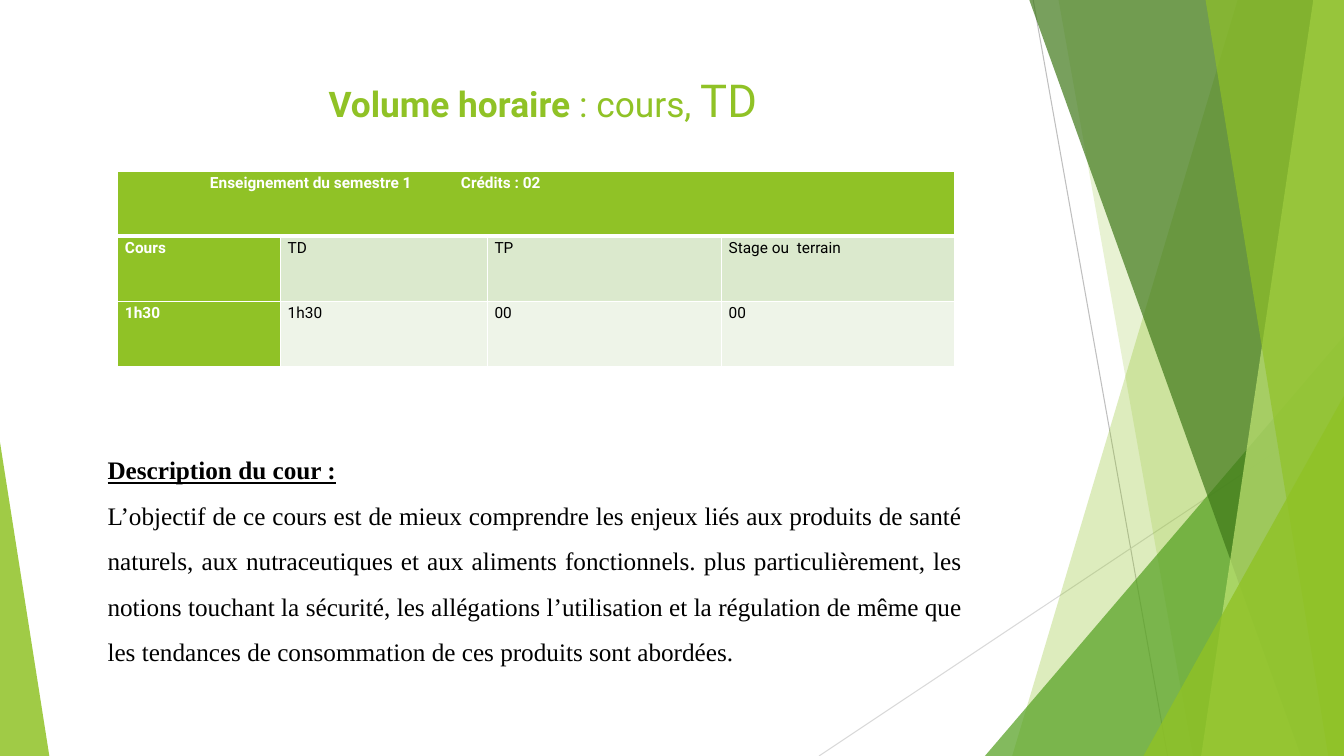
from lxml.etree import SubElement
from pptx import Presentation
from pptx.dml.color import RGBColor
from pptx.enum.shapes import MSO_CONNECTOR as Connector, MSO_SHAPE as Preset
from pptx.enum.text import MSO_ANCHOR as Anchor, PP_ALIGN as Align
from pptx.oxml.ns import qn
from pptx.util import Pt

WIDTH, HEIGHT = 1280, 720
GREEN, WHITE, BLACK = "90C226", "FFFFFF", "000000"
SANS, SERIF = "Roboto", "Times New Roman"


def px(length):
    return length * 9525


def color(value):
    return RGBColor.from_string(value)


def set_values(target, values):
    for name, value in values.items():
        setattr(target, name, value)


def add_run(paragraph, text, fill, **values):
    run = paragraph.add_run()
    run.text = text
    set_values(run.font, values)
    run.font.color.rgb = color(fill)


def paint(shape, fill, opacity):
    shape.shadow.inherit = False
    shape.fill.solid()
    shape.fill.fore_color.rgb = color(fill)
    shape.line.fill.background()
    fill_color = shape.fill._xPr.find(qn("a:solidFill"))[0]
    SubElement(fill_color, qn("a:alpha"), val=str(opacity * 1000))


def add_line(slide, start, end, stroke):
    line = slide.shapes.add_connector(Connector.STRAIGHT, *map(px, start + end))
    line.line.color.rgb = color(stroke)
    line.line.width = Pt(0.75)
    SubElement(line._element.spPr, qn("a:effectLst"))


def add_panel(slide, top_left, top_right, bottom_left, fill, opacity):
    builder = slide.shapes.build_freeform(top_left, -1, scale=px(1))
    corners = [(top_right, -1), (WIDTH, -1), (WIDTH, HEIGHT), (bottom_left, HEIGHT)]
    if top_right == WIDTH:
        corners.pop(0)
    builder.add_line_segments(corners)
    paint(builder.convert_to_shape(), fill, opacity)


def add_triangle(slide, box, apex, fill, opacity):
    shape = slide.shapes.add_shape(Preset.ISOSCELES_TRIANGLE, *map(px, box))
    shape.adjustments[0] = apex
    paint(shape, fill, opacity)


def add_decoration(slide):
    add_line(slide, (984, 0), (1112, HEIGHT), "BFBFBF")
    add_line(slide, (WIDTH, 387), (780, HEIGHT), "D9D9D9")
    add_panel(slide, 1179, WIDTH, 964, GREEN, 30)
    add_panel(slide, 1008, WIDTH, 1136, GREEN, 20)
    add_triangle(slide, (938, 320, 342, 400), 1, "54A021", 72)
    add_panel(slide, 980, WIDTH, 1239, "3F7819", 70)
    add_panel(slide, 1251, WIDTH, 1144, "C0E474", 70)
    add_panel(slide, 1148, WIDTH, 1265, GREEN, 65)
    add_triangle(slide, (1089, 377, 191, 343), 1, GREEN, 80)
    add_triangle(slide, (0, 421, 47, 299), 0, GREEN, 85)


def add_text_frame(slide, box):
    frame = slide.shapes.add_textbox(*map(px, box)).text_frame
    set_values(frame, {"word_wrap": True, "vertical_anchor": Anchor.TOP})
    return frame


def add_title(slide, box):
    paragraph = add_text_frame(slide, box).paragraphs[0]
    paragraph.alignment = Align.CENTER
    add_run(paragraph, "Volume horaire", GREEN, name=SANS, size=Pt(25.2), bold=True)
    add_run(paragraph, " : cours, ", GREEN, name=SANS, size=Pt(25.2))
    add_run(paragraph, "TD", GREEN, name=SANS, size=Pt(32.4))


def add_borders(cell, bottom_width):
    properties = cell._tc.get_or_add_tcPr()
    for side, width in {"L": 1, "R": 1, "T": 1, "B": bottom_width}.items():
        border = SubElement(properties, qn(f"a:ln{side}"), w=str(Pt(width)))
        SubElement(SubElement(border, qn("a:solidFill")), qn("a:srgbClr"), val=WHITE)


def format_cell(cell, text, fill, heading, left_margin=7):
    set_values(cell, {"margin_left": px(left_margin), "margin_right": px(7),
                      "margin_top": 0, "margin_bottom": 0})
    cell.fill.solid()
    cell.fill.fore_color.rgb = color(fill)
    paragraph = cell.text_frame.paragraphs[0]
    paragraph.line_spacing = 1.15
    add_run(paragraph, text, WHITE if heading else BLACK,
            name=SANS, size=Pt(11), bold=heading)
    return paragraph


def add_hours_table(slide, box):
    rows = [("Cours", "TD", "TP", "Stage ou  terrain"), ("1h30", "1h30", "00", "00")]
    bands = ["DBE9CD", "EEF4E8"]
    table = slide.shapes.add_table(3, 4, *map(px, box)).table
    set_values(table, {"first_row": False, "horz_banding": False})
    for column, width in zip(table.columns, (155, 197, 223, 222)):
        column.width = px(width)
    for index, row in enumerate(table.rows):
        for cell in row.cells:
            add_borders(cell, 3 if index == 0 else 1)
    header = table.cell(0, 0)
    header.merge(table.cell(0, 3))
    paragraph = format_cell(header, "Enseignement du semestre 1\tCrédits : 02",
                            GREEN, True, 88)
    tabs = SubElement(paragraph._p.get_or_add_pPr(), qn("a:tabLst"))
    SubElement(tabs, qn("a:tab"), pos=str(px(239)), algn="l")
    for row, (texts, band) in enumerate(zip(rows, bands), 1):
        for column, text in enumerate(texts):
            heading = column == 0
            format_cell(table.cell(row, column), text, GREEN if heading else band, heading)


def add_description(slide, box):
    frame = add_text_frame(slide, box)
    heading, body = frame.paragraphs[0], frame.add_paragraph()
    for paragraph in (heading, body):
        set_values(paragraph, {"alignment": Align.JUSTIFY, "line_spacing": 1.5})
    add_run(heading, "Description du cour :", BLACK,
            name=SERIF, size=Pt(18), bold=True, underline=True)
    add_run(body, "L’objectif de ce cours est de mieux comprendre les enjeux liés aux "
            "produits de santé naturels, aux nutraceutiques et aux aliments fonctionnels. "
            "plus particulièrement, les notions touchant la sécurité, les allégations "
            "l’utilisation et la régulation de même que les tendances de consommation de "
            "ces produits sont abordées.", BLACK, name=SERIF, size=Pt(18))


def main():
    presentation = Presentation()
    set_values(presentation, {"slide_width": px(WIDTH), "slide_height": px(HEIGHT)})
    slide = presentation.slides.add_slide(presentation.slide_layouts[6])
    add_decoration(slide)
    add_title(slide, (66, 64, 902, 81))
    add_hours_table(slide, (112, 163, 797, 186))
    add_description(slide, (93, 414, 833, 228))
    presentation.save("out.pptx")


if __name__ == "__main__":
    main()
